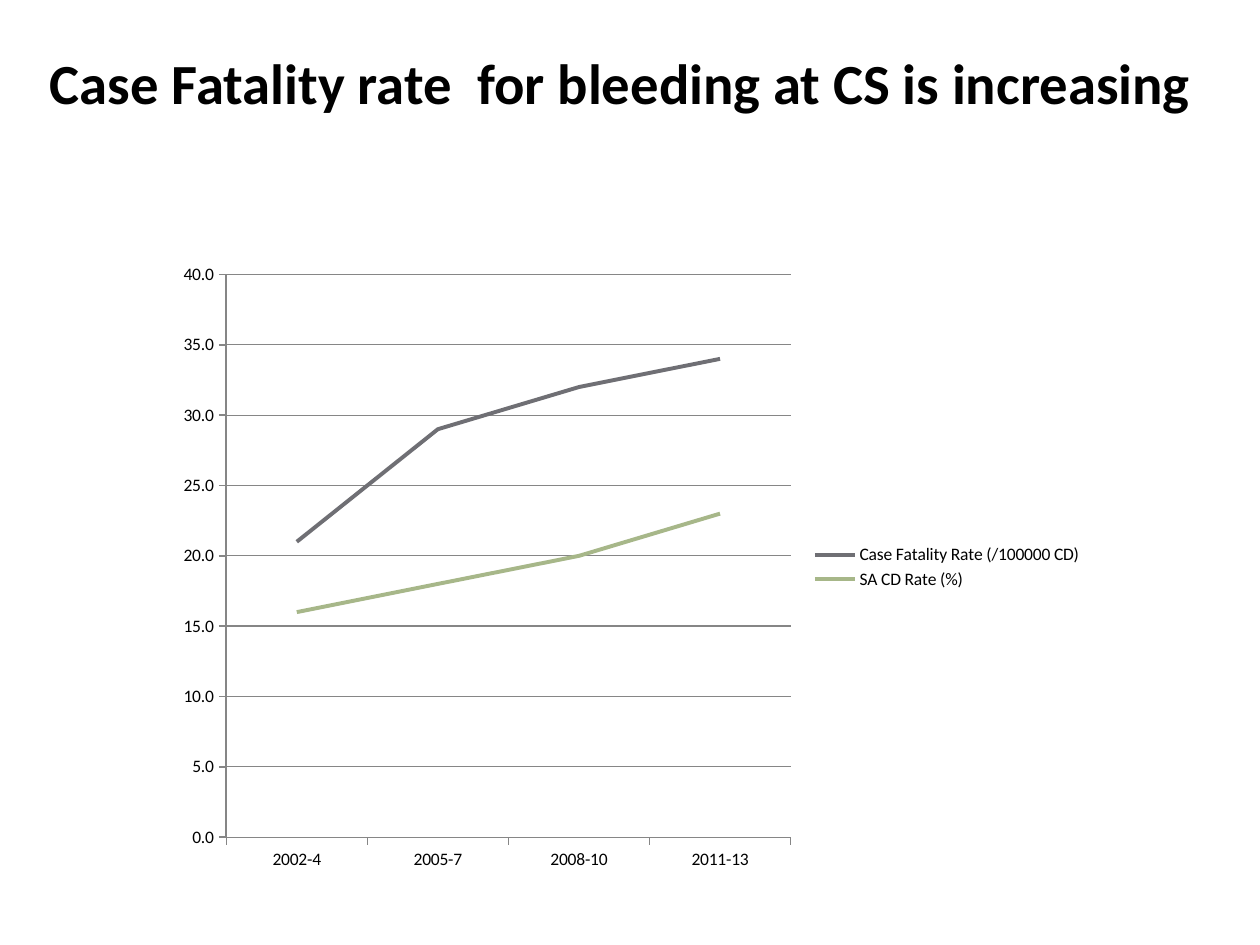
import pptx
import pptx.chart.data
import pptx.dml.color
import pptx.enum.chart
import pptx.enum.text
import pptx.util

BLACK = pptx.dml.color.RGBColor(0x00, 0x00, 0x00)
AXIS_GRAY = pptx.dml.color.RGBColor(0x86, 0x86, 0x86)
FATALITY_GRAY = pptx.dml.color.RGBColor(0x6F, 0x6F, 0x74)
RATE_GREEN = pptx.dml.color.RGBColor(0xA7, 0xB7, 0x89)

PERIODS = ["2002-4", "2005-7", "2008-10", "2011-13"]
RATES = [
    ("Case Fatality Rate (/100000 CD)", [21, 29, 32, 34], FATALITY_GRAY),
    ("SA CD Rate (%)", [16, 18, 20, 23], RATE_GREEN),
]


class SlideBuilder:
    """Holds the font, the pixel scale and the current slide."""

    font_name = "Calibri"
    scale = 914400 / 126

    def __init__(self, slide):
        self.slide = slide

    def lengths(self, *pixels):
        return [pptx.util.Emu(round(pixel * self.scale)) for pixel in pixels]

    def style_font(self, font, size, bold=False):
        font.name = self.font_name
        font.size = pptx.util.Pt(size)
        font.bold = bold
        font.color.rgb = BLACK

    def style_line(self, line, color, width):
        line.color.rgb = color
        line.width = pptx.util.Pt(width)

    def title(self, left, top, width, height, text, size):
        box = self.slide.shapes.add_textbox(*self.lengths(left, top, width, height))
        frame = box.text_frame
        frame.word_wrap = True
        frame.vertical_anchor = pptx.enum.text.MSO_ANCHOR.MIDDLE
        frame.text = text
        para = frame.paragraphs[0]
        para.alignment = pptx.enum.text.PP_ALIGN.CENTER
        self.style_font(para.runs[0].font, size, bold=True)

    def line_chart(self, left, top, width, height, categories, rates):
        data = pptx.chart.data.CategoryChartData(number_format="0.0")
        data.categories = categories
        for name, values, color in rates:
            data.add_series(name, values)
        chart = self.slide.shapes.add_chart(
            pptx.enum.chart.XL_CHART_TYPE.LINE,
            *self.lengths(left, top, width, height), data,
        ).chart
        self.style_font(chart.font, 10)
        chart.has_title = False
        chart.has_legend = True
        chart.legend.position = pptx.enum.chart.XL_LEGEND_POSITION.RIGHT
        chart.legend.include_in_layout = False
        chart.plots[0].vary_by_categories = False
        for series, (name, values, color) in zip(chart.plots[0].series, rates):
            series.smooth = False
            series.marker.style = pptx.enum.chart.XL_MARKER_STYLE.NONE
            self.style_line(series.format.line, color, 2.25)
        for axis, width in ((chart.category_axis, 0.75), (chart.value_axis, 1)):
            axis.major_tick_mark = pptx.enum.chart.XL_TICK_MARK.OUTSIDE
            axis.minor_tick_mark = pptx.enum.chart.XL_TICK_MARK.NONE
            self.style_line(axis.format.line, AXIS_GRAY, width)
        value_axis = chart.value_axis
        value_axis.minimum_scale, value_axis.maximum_scale = 0, 40
        value_axis.major_unit = 5
        value_axis.has_major_gridlines = True
        self.style_line(value_axis.major_gridlines.format.line, AXIS_GRAY, 0.75)
        value_axis.tick_labels.number_format = "0.0"
        value_axis.tick_labels.number_format_is_linked = False


def main():
    deck = pptx.Presentation()
    deck.slide_width = pptx.util.Inches(10)
    deck.slide_height = pptx.util.Inches(7.5)
    page = SlideBuilder(deck.slides.add_slide(deck.slide_layouts[6]))
    page.title(0, 38, 1241, 88, "Case Fatality rate  for bleeding at CS is increasing", 32.4)
    page.line_chart(165, 252, 930, 630, PERIODS, RATES)
    deck.save("out.pptx")


if __name__ == "__main__":
    main()
